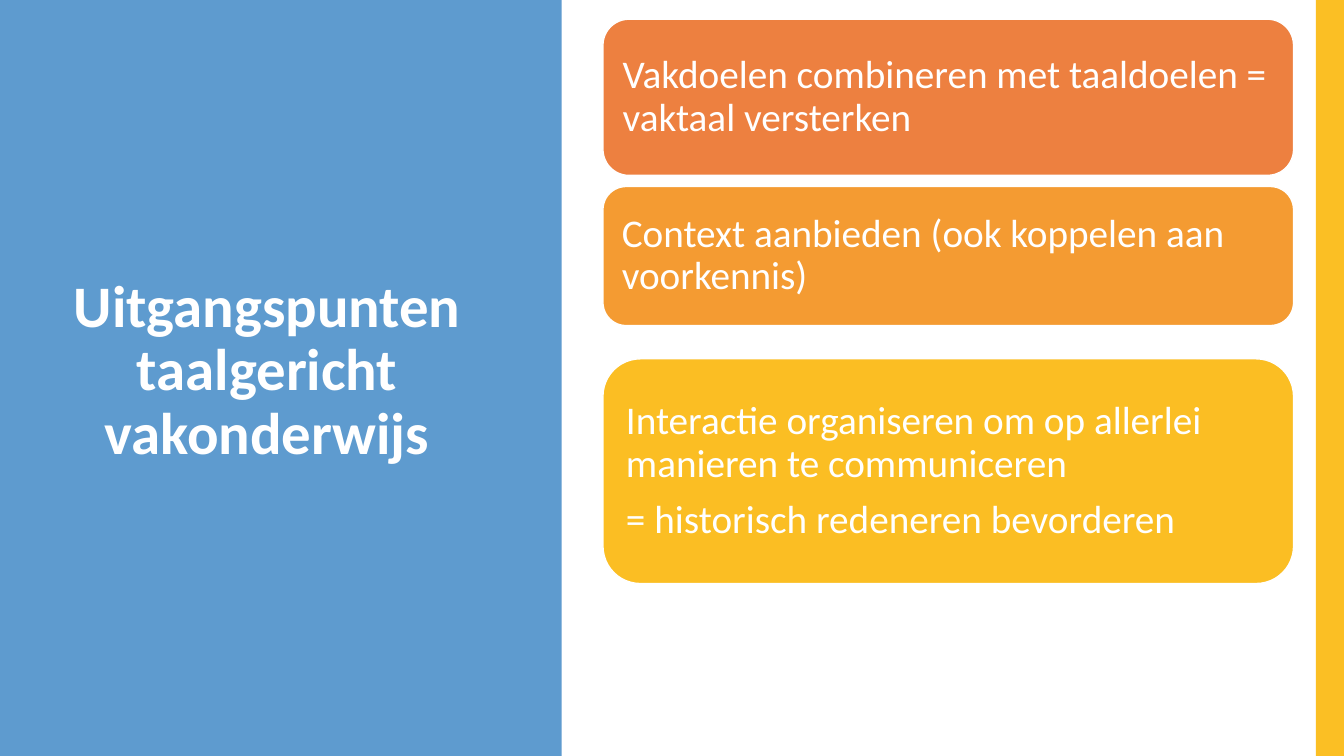
from pptx import Presentation
from pptx import util as u
from pptx.dml.color import RGBColor
from pptx.enum import shapes, text


def paint(target, colour):
    target.solid()
    target.fore_color.rgb = RGBColor.from_string(colour)


def write(frame, paragraphs, size=28, colour="FFFFFF", bold=False,
          align=text.PP_ALIGN.LEFT, after=0, inset=0.1):
    frame.word_wrap = True
    frame.auto_size = text.MSO_AUTO_SIZE.NONE
    frame.vertical_anchor = text.MSO_ANCHOR.MIDDLE
    frame.margin_left = frame.margin_right = u.Inches(inset)
    frame.margin_top = frame.margin_bottom = u.Inches(min(inset, 0.12))
    for index, wording in enumerate(paragraphs):
        paragraph = frame.add_paragraph() if index else frame.paragraphs[0]
        paragraph.text = wording
        paragraph.alignment = align
        paragraph.line_spacing = 0.9
        paragraph.space_before = u.Pt(0)
        paragraph.space_after = u.Pt(after)
        font = paragraph.font
        font.name = "Calibri"
        font.size = u.Pt(size)
        font.bold = bold
        paint(font.fill, colour)


class PrinciplesSlide:
    white = "FFFFFF"

    def __init__(self, presentation):
        self.slide = presentation.slides.add_slide(presentation.slide_layouts[5])
        paint(self.slide.background.fill, self.white)

    def shape(self, kind, box, fill):
        shape = self.slide.shapes.add_shape(kind, *map(u.Inches, box))
        shape.shadow.inherit = False
        paint(shape.fill, fill)
        return shape

    def panel(self, box, fill):
        self.shape(shapes.MSO_SHAPE.RECTANGLE, box, fill).line.fill.background()

    def card(self, box, fill, paragraphs):
        card = self.shape(shapes.MSO_SHAPE.ROUNDED_RECTANGLE, box, fill)
        paint(card.line.fill, self.white)
        card.line.width = u.Pt(1)
        write(card.text_frame, paragraphs, after=9.8, inset=0.12)

    def title(self, box, wording):
        title = self.slide.shapes.title
        title.left, title.top, title.width, title.height = map(u.Inches, box)
        write(title.text_frame, [wording], size=42, bold=True,
              align=text.PP_ALIGN.CENTER)
        self.slide.shapes._spTree.append(title._element)


def main():
    presentation = Presentation()
    presentation.slide_width = u.Inches(13.33)
    presentation.slide_height = u.Inches(7.5)

    slide = PrinciplesSlide(presentation)
    slide.panel((13.05, 0, 0.28, 7.5), "FBBF24")
    slide.panel((0, 0, 5.57, 7.5), "5E9BCF")
    slide.title((0.57, 0.68, 4.16, 6.02), "Uitgangspunten taalgericht vakonderwijs")

    principles = [
        (0.19, 1.55, "ED8040",
         ["Vakdoelen combineren met taaldoelen = vaktaal versterken"]),
        (1.85, 1.38, "F49B32",
         ["Context aanbieden (ook koppelen aan voorkennis)"]),
        (3.56, 2.23, "FBBE23",
         ["Interactie organiseren om op allerlei manieren te communiceren",
          "= historisch redeneren bevorderen"]),
    ]
    for top, height, fill, paragraphs in principles:
        slide.card((5.98, top, 6.85, height), fill, paragraphs)

    presentation.save("out.pptx")


if __name__ == "__main__":
    main()
